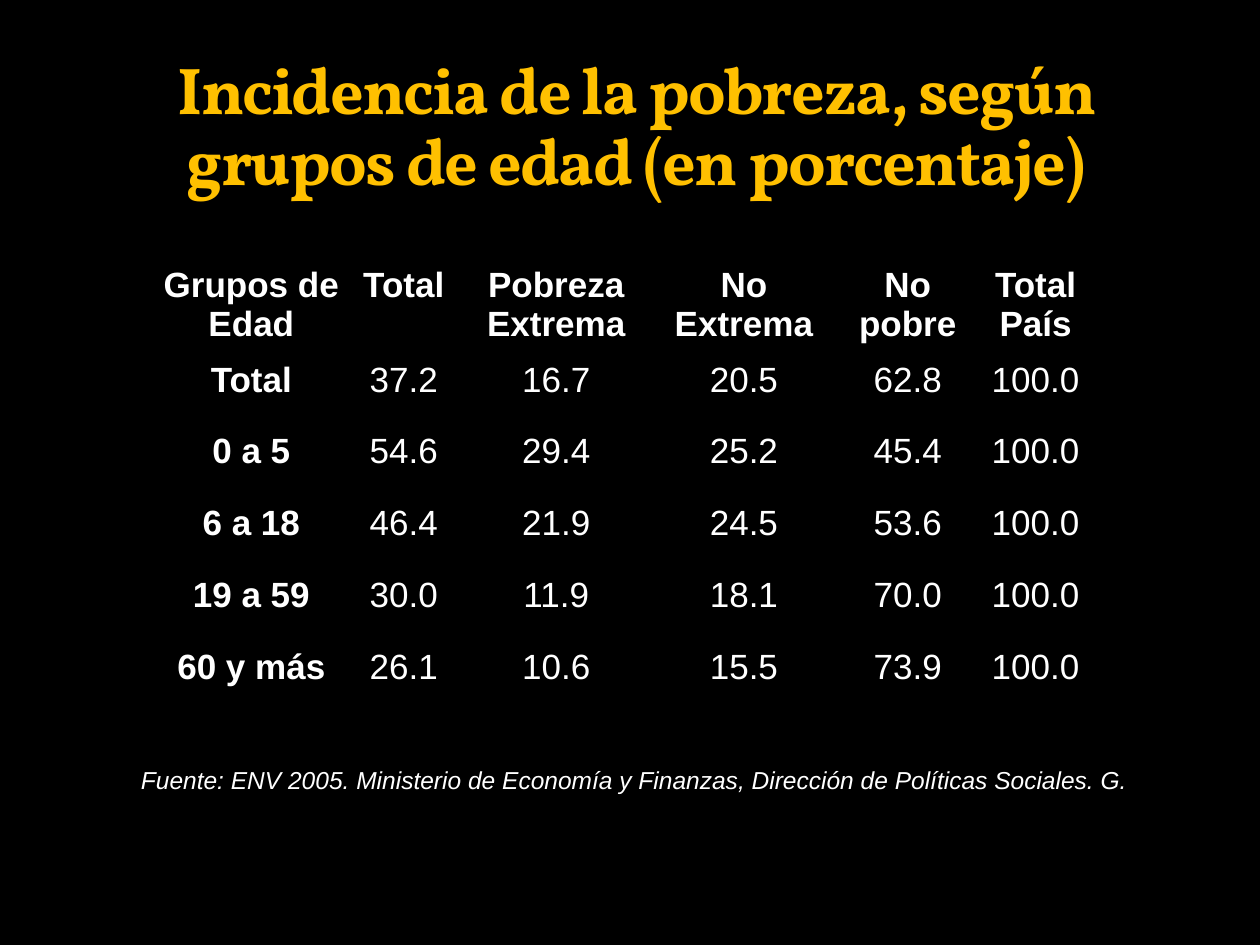
from lxml.etree import SubElement
from pptx import Presentation
from pptx.dml.color import RGBColor
from pptx.enum.text import MSO_ANCHOR as Anchor, MSO_AUTO_SIZE as Fit, PP_ALIGN as Align
from pptx.oxml import parse_xml
from pptx.oxml.ns import nsdecls, qn
from pptx.util import Inches, Pt

COLORS = {"back": "000000", "title": "FFC000", "edge": "3C4422", "text": "FFFFFF"}

HEAD = ["Grupos de Edad", "Total", "Pobreza Extrema", "No Extrema", "No pobre", "Total País"]
ROWS = [
    ["Total", "37.2", "16.7", "20.5", "62.8", "100.0"],
    ["0 a 5", "54.6", "29.4", "25.2", "45.4", "100.0"],
    ["6 a 18", "46.4", "21.9", "24.5", "53.6", "100.0"],
    ["19 a 59", "30.0", "11.9", "18.1", "70.0", "100.0"],
    ["60 y más", "26.1", "10.6", "15.5", "73.9", "100.0"],
]
WIDTHS = [1.49, 0.93, 1.49, 1.49, 1.11, 0.92]
HEIGHTS = [0.75] + [0.57] * len(ROWS)


def rgb(name):
    return RGBColor.from_string(COLORS[name])


def put_text(frame, text, size=20, font="Arial", color="text", bold=False,
             italic=False, align=Align.CENTER, space=None):
    para = frame.paragraphs[0]
    para.alignment = align
    para.line_spacing = space
    run = para.add_run()
    run.text = text
    style = run.font
    style.size, style.name = Pt(size), font
    style.bold, style.italic = bold, italic
    style.color.rgb = rgb(color)
    return run


def add_edge(run):
    """Give the letters a thin, mostly transparent outline."""
    props = run.font._element
    props.set("spc", "-100")
    props.insert(0, parse_xml(
        f'<a:ln {nsdecls("a")} w="3175"><a:solidFill><a:srgbClr val="{COLORS["edge"]}">'
        '<a:alpha val="25000"/></a:srgbClr></a:solidFill></a:ln>'))


def add_title(slide):
    title = slide.shapes.title
    title.left, title.top = Inches(0.55), Inches(0.31)
    title.width, title.height = Inches(9), Inches(1.33)
    frame = title.text_frame
    frame.word_wrap, frame.auto_size = True, Fit.NONE
    frame.vertical_anchor = Anchor.BOTTOM
    run = put_text(frame, "Incidencia de la pobreza, según grupos de edad (en porcentaje)",
                   size=37.8, font="Vollkorn", color="title", bold=True, space=0.9)
    add_edge(run)


def add_borders(cell):
    props = cell._tc.get_or_add_tcPr()
    for spot, side in enumerate(("lnL", "lnR", "lnT", "lnB")):
        line = parse_xml(f'<a:{side} {nsdecls("a")} w="12700"/>')
        fill = SubElement(line, qn("a:solidFill"))
        SubElement(fill, qn("a:srgbClr"), val=COLORS["back"])
        props.insert(spot, line)


def add_grid(slide):
    grid = slide.shapes.add_table(
        len(HEIGHTS), len(WIDTHS), Inches(1.25), Inches(2.11),
        Inches(sum(WIDTHS)), Inches(sum(HEIGHTS))).table
    grid.first_row = grid.horz_banding = False
    for col, width in zip(grid.columns, WIDTHS):
        col.width = Inches(width)
    for row, height in zip(grid.rows, HEIGHTS):
        row.height = Inches(height)
    for r, words in enumerate([HEAD] + ROWS):
        for c, word in enumerate(words):
            cell = grid.cell(r, c)
            cell.margin_left = cell.margin_right = Inches(0.03)
            cell.margin_top = cell.margin_bottom = 0
            cell.fill.background()
            add_borders(cell)
            put_text(cell.text_frame, word, bold=r == 0 or c == 0)


def add_source(slide):
    box = slide.shapes.add_textbox(Inches(1.02), Inches(6.02), Inches(8.13), Inches(0.34))
    frame = box.text_frame
    frame.word_wrap, frame.auto_size = False, Fit.SHAPE_TO_FIT_TEXT
    frame.vertical_anchor = Anchor.MIDDLE
    put_text(frame, "Fuente: ENV 2005. Ministerio de Economía y Finanzas, "
             "Dirección de Políticas Sociales. G. ",
             size=14, italic=True, align=Align.JUSTIFY)


def main():
    deck = Presentation()
    deck.slide_width, deck.slide_height = Inches(10), Inches(7.5)
    slide = deck.slides.add_slide(deck.slide_layouts[5])
    back = slide.background.fill
    back.solid()
    back.fore_color.rgb = rgb("back")
    add_title(slide)
    add_grid(slide)
    add_source(slide)
    deck.save("out.pptx")


if __name__ == "__main__":
    main()
